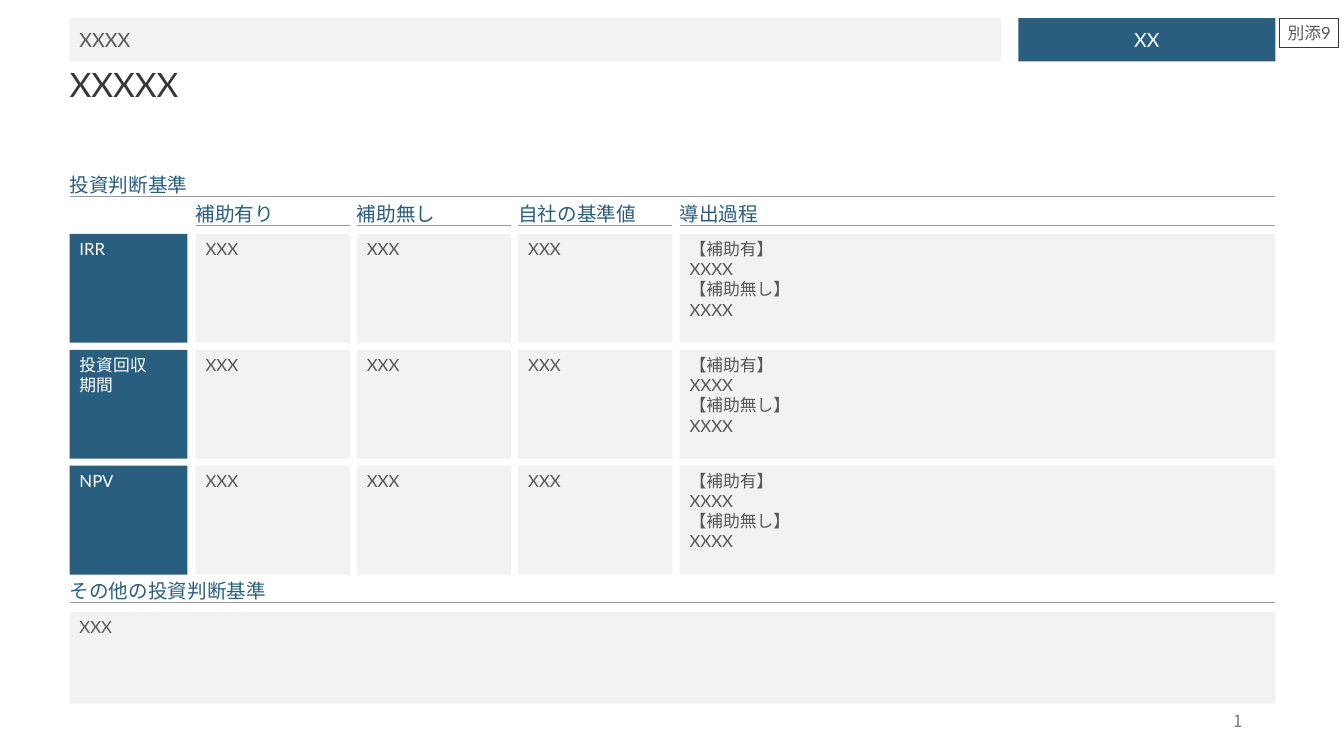
"""Builds the investment criteria slide."""
import dataclasses

import lxml.etree
import pptx
import pptx.dml.color
import pptx.enum.shapes
import pptx.enum.text
import pptx.oxml.ns
import pptx.util

ANCHOR = pptx.enum.text.MSO_ANCHOR
ALIGN = pptx.enum.text.PP_ALIGN
PIXEL = 9144


@dataclasses.dataclass(frozen=True)
class Theme:
    """Holds the colours, fonts and type sizes."""
    blue: str = "295E7E"
    pale: str = "F2F2F2"
    white: str = "FFFFFF"
    rule: str = "9A9A9A"
    dark: str = "37373A"
    body: str = "575757"
    number: str = "797979"
    font: str = "Lato"
    asian_font: str = "Noto Sans CJK JP"
    title_size: int = 24
    heading_size: int = 14
    body_size: int = 12
    line_width: float = 0.75


THEME = Theme()
LEFT, RIGHT = 69, 1265
CRITERIA = ["IRR", "投資回収\v期間", "NPV"]
COLUMNS = ["補助有り", "補助無し", "自社の基準値"]
PROCESS = "【補助有】\nXXXX\n【補助無し】\nXXXX"
COLUMN_LEFT, COLUMN_WIDTH, COLUMN_STEP = 194, 153, 160
ROW_TOP, ROW_HEIGHT, ROW_STEP = 232, 108, 115
LABEL_WIDTH, HEADING_HEIGHT = 117, 29


def lengths(*pixels):
    """Turns whole pixels into EMU."""
    return [pptx.util.Emu(pixel * PIXEL) for pixel in pixels]


def colour(value):
    """Returns the colour object of a hexadecimal value."""
    return pptx.dml.color.RGBColor.from_string(value)


def write_text(shape, text, *, size=THEME.body_size, color=THEME.body, font=THEME.font,
               align=ALIGN.LEFT, anchor=ANCHOR.TOP, inset=True, wrap=True, spacing=None):
    """Fills a shape with formatted text."""
    frame = shape.text_frame
    frame.text = text
    frame.word_wrap = wrap
    frame.vertical_anchor = anchor
    if not inset:
        frame.margin_left = frame.margin_right = frame.margin_top = frame.margin_bottom = 0
    for paragraph in frame.paragraphs:
        paragraph.alignment = align
        paragraph.line_spacing = spacing
        for run in paragraph.runs:
            run.font.size = pptx.util.Pt(size)
            run.font.color.rgb = colour(color)
            run.font.name = font
            asian = lxml.etree.SubElement(run.font._element, pptx.oxml.ns.qn("a:ea"))
            asian.set("typeface", THEME.asian_font)


def add_label(slide, box, text, **text_format):
    """Adds a text box."""
    shape = slide.shapes.add_textbox(*lengths(*box))
    write_text(shape, text, **text_format)
    return shape


def add_box(slide, box, text, fill=THEME.pale, line=None, **text_format):
    """Adds a rectangle with text."""
    shape = slide.shapes.add_shape(pptx.enum.shapes.MSO_SHAPE.RECTANGLE, *lengths(*box))
    shape.shadow.inherit = False
    if fill:
        shape.fill.solid()
        shape.fill.fore_color.rgb = colour(fill)
    else:
        shape.fill.background()
    if line:
        shape.line.color.rgb = colour(line)
        shape.line.width = pptx.util.Pt(THEME.line_width)
    else:
        shape.line.fill.background()
    write_text(shape, text, **text_format)


def add_heading(slide, left, top, width, text):
    """Adds a heading with a rule under it."""
    add_label(slide, (left, top, width, HEADING_HEIGHT), text, size=THEME.heading_size,
              color=THEME.blue, anchor=ANCHOR.BOTTOM, inset=False)
    bottom = top + HEADING_HEIGHT
    line = slide.shapes.add_connector(pptx.enum.shapes.MSO_CONNECTOR.STRAIGHT,
                                      *lengths(left, bottom, left + width, bottom))
    line.line.color.rgb = colour(THEME.rule)
    line.line.width = pptx.util.Pt(THEME.line_width)
    lxml.etree.SubElement(line._element.spPr, pptx.oxml.ns.qn("a:effectLst"))


def add_header(slide):
    """Adds the top bar, the annex tag and the title."""
    add_box(slide, (LEFT, 18, 924, 43), "XXXX", size=THEME.heading_size, anchor=ANCHOR.MIDDLE)
    add_box(slide, (1010, 18, 255, 43), "XX", fill=THEME.blue, size=THEME.heading_size,
            color=THEME.white, align=ALIGN.CENTER, anchor=ANCHOR.MIDDLE)
    add_box(slide, (1269, 18, 59, 29), "別添9", fill=None, line=THEME.dark,
            align=ALIGN.CENTER, anchor=ANCHOR.MIDDLE, wrap=False)
    title = add_label(slide, (LEFT, 68, RIGHT - LEFT, 36), "XXXXX", size=THEME.title_size,
                      color=THEME.dark, inset=False, spacing=0.9)
    title.text_frame.auto_size = pptx.enum.text.MSO_AUTO_SIZE.SHAPE_TO_FIT_TEXT


def add_criteria(slide):
    """Adds the grid of criteria."""
    add_heading(slide, LEFT, 166, RIGHT - LEFT, "投資判断基準")
    columns = [(COLUMN_LEFT + index * COLUMN_STEP, COLUMN_WIDTH, heading, "XXX")
               for index, heading in enumerate(COLUMNS)]
    process_left = COLUMN_LEFT + len(COLUMNS) * COLUMN_STEP
    columns.append((process_left, RIGHT - process_left, "導出過程", PROCESS))
    for left, width, heading, _ in columns:
        add_heading(slide, left, 195, width, heading)
    for index, criterion in enumerate(CRITERIA):
        top = ROW_TOP + index * ROW_STEP
        add_box(slide, (LEFT, top, LABEL_WIDTH, ROW_HEIGHT), criterion,
                fill=THEME.blue, color=THEME.white)
        for left, width, _, text in columns:
            add_box(slide, (left, top, width, ROW_HEIGHT), text)


def add_footer(slide):
    """Adds the other criteria and the page number."""
    add_heading(slide, LEFT, 569, RIGHT - LEFT, "その他の投資判断基準")
    add_box(slide, (LEFT, 607, RIGHT - LEFT, 91), "XXX")
    add_label(slide, (942, 695, 300, 40), "1", color=THEME.number, font=THEME.asian_font,
              align=ALIGN.RIGHT, anchor=ANCHOR.MIDDLE)


def main():
    """Builds and saves the presentation."""
    presentation = pptx.Presentation()
    presentation.slide_width, presentation.slide_height = lengths(1333, 750)
    slide = presentation.slides.add_slide(presentation.slide_layouts[6])
    add_criteria(slide)
    add_footer(slide)
    add_header(slide)
    presentation.save("out.pptx")


if __name__ == "__main__":
    main()
